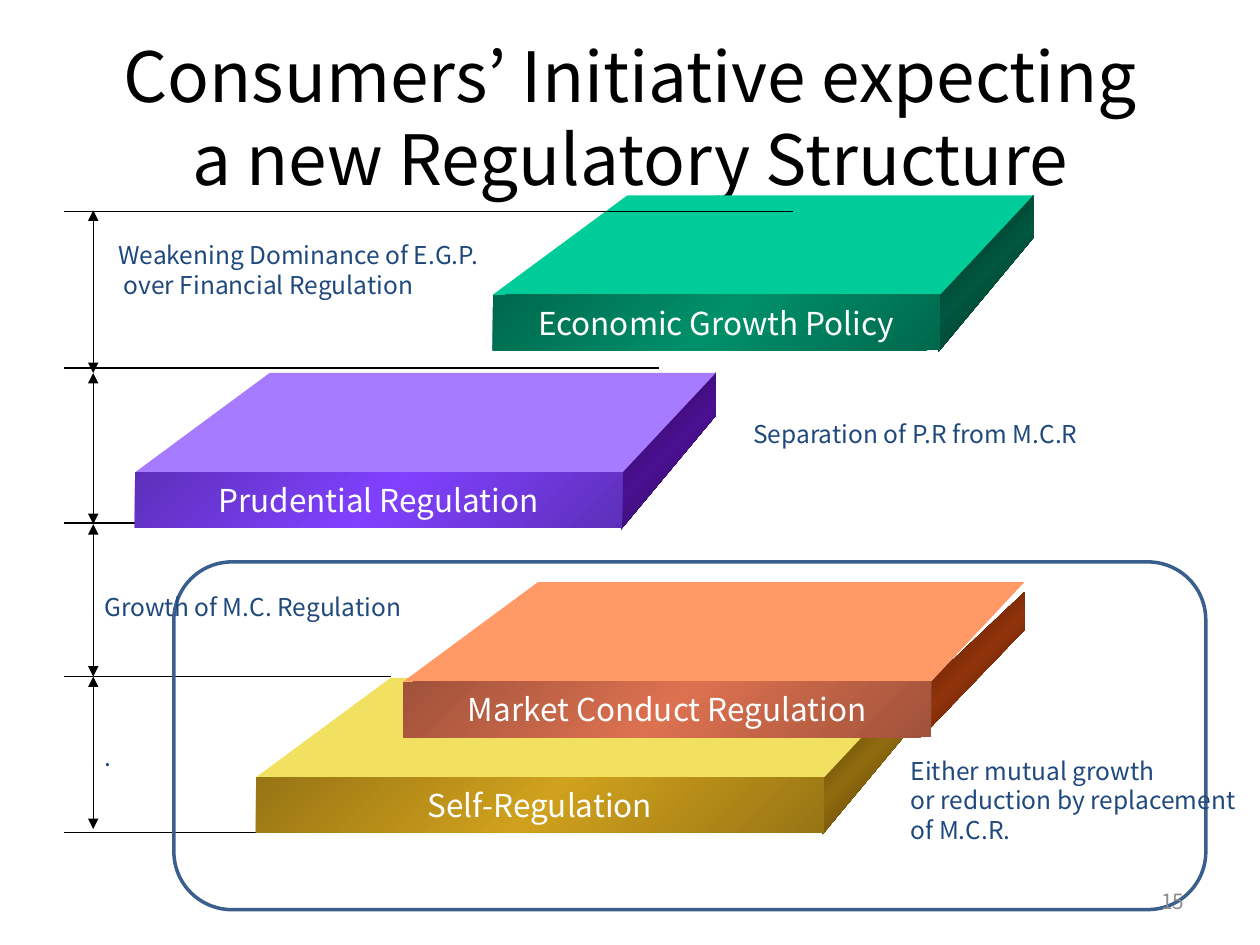
from copy import deepcopy
from dataclasses import dataclass

from lxml import etree
from pptx import Presentation
from pptx import util as u
from pptx.dml.color import RGBColor
from pptx.enum import shapes, text
from pptx.oxml.ns import qn


@dataclass(frozen=True)
class Theme:
    font: str = "Noto Sans CJK KR"
    ink: str = "000000"
    note: str = "1F497D"
    label: str = "FFFFFF"
    muted: str = "8C8C8C"
    frame: str = "3A5F8C"
    title_size: float = 39.6
    label_size: float = 18
    note_size: float = 14
    number_size: float = 12
    leading: float = 1.2
    green: tuple = ("00CC99", "00684D", "00906A", "00281D", "00563F")
    violet: tuple = ("A77BFF", "5D2FB9", "8041FF", "230744", "4B1092")
    yellow: tuple = ("F2E160", "977514", "D0A11C", "433206", "906B0E")
    orange: tuple = ("FF9966", "A0523A", "DC7150", "431805", "90330A")


THEME = Theme()
COLUMNS, ROWS = 100, 75


def write(frame, content, size, color, align=text.PP_ALIGN.LEFT,
          anchor=text.MSO_ANCHOR.TOP, wrap=False):
    frame.word_wrap = wrap
    frame.vertical_anchor = anchor
    frame.text = content
    for para in frame.paragraphs:
        para.alignment = align
        para.line_spacing = u.Pt(size * THEME.leading)
        for span in para.runs:
            span.font.name = THEME.font
            span.font.size = u.Pt(size)
            span.font.color.rgb = RGBColor.from_string(color)


class Board:
    def __init__(self, deck, theme):
        self.theme = theme
        self.column = deck.slide_width / COLUMNS
        self.row = deck.slide_height / ROWS
        self.page = deck.slides.add_slide(deck.slide_layouts[6])

    def place(self, *lengths):
        units = (self.column, self.row) * 2
        return [u.Emu(round(length * unit)) for length, unit in zip(lengths, units)]

    def text(self, area, content, size, color, **style):
        box = self.page.shapes.add_textbox(*self.place(*area))
        write(box.text_frame, content, size, color, **style)

    def shade(self, shape, edge, middle):
        shape.fill.gradient()
        shape.fill.gradient_angle = 315
        stop_list = shape._element.spPr.find(qn("a:gradFill")).find(qn("a:gsLst"))
        stop_list.insert(1, deepcopy(stop_list[0]))
        stops = zip(shape.fill.gradient_stops, (0, 0.5, 1), (edge, middle, edge))
        for stop, position, color in stops:
            stop.position = position
            stop.color.rgb = RGBColor.from_string(color)

    def polygon(self, points):
        corners = [self.place(*point) for point in points]
        builder = self.page.shapes.build_freeform(*corners[0])
        builder.add_line_segments(corners[1:], close=True)
        shape = builder.convert_to_shape()
        shape.shadow.inherit = False
        shape.line.fill.background()
        return shape

    def slab(self, label, left, back, width, colors, gap=0):
        top_color, front_edge, front_middle, side_edge, side_middle = colors
        front, height, depth = back + 7.9, 4.4, 7.4
        right = left + width
        far = right + depth
        side = self.polygon([
            (far, back + 3.4 + gap / 2), (right - 0.1, back + 12.4 - gap),
            (right - 0.1, front), (far, back + gap)])
        self.shade(side, side_edge, side_middle)
        lid = self.polygon([
            (right, front), (left, front), (left + 10.7, back), (far, back)])
        lid.fill.solid()
        lid.fill.fore_color.rgb = RGBColor.from_string(top_color)
        face = self.page.shapes.add_shape(
            shapes.MSO_SHAPE.RECTANGLE, *self.place(left, front, width, height))
        face.shadow.inherit = False
        face.line.fill.background()
        self.shade(face, front_edge, front_middle)
        write(face.text_frame, label, self.theme.label_size, self.theme.label,
              align=text.PP_ALIGN.CENTER, anchor=text.MSO_ANCHOR.MIDDLE)

    def line(self, start, end, arrows=False):
        rule = self.page.shapes.add_connector(
            shapes.MSO_CONNECTOR.STRAIGHT, *self.place(*start, *end))
        rule.line.color.rgb = RGBColor.from_string(self.theme.ink)
        rule.line.width = u.Pt(0.75)
        if arrows:
            outline = rule.line._get_or_add_ln()
            for end_name in ("a:headEnd", "a:tailEnd"):
                etree.SubElement(outline, qn(end_name), type="triangle")
        etree.SubElement(rule._element.spPr, qn("a:effectLst"))

    def frame(self, area):
        box = self.page.shapes.add_shape(
            shapes.MSO_SHAPE.ROUNDED_RECTANGLE, *self.place(*area))
        box.shadow.inherit = False
        box.fill.background()
        box.line.color.rgb = RGBColor.from_string(self.theme.frame)
        box.line.width = u.Pt(2)


def main():
    deck = Presentation()
    deck.slide_width, deck.slide_height = u.Inches(10), u.Inches(7.5)
    board = Board(deck, THEME)

    board.text((5, 3, 90, 12.5),
               "Consumers’ Initiative expecting\va new Regulatory Structure",
               THEME.title_size, THEME.ink, align=text.PP_ALIGN.CENTER,
               anchor=text.MSO_ANCHOR.MIDDLE, wrap=True)

    board.slab("Economic Growth Policy", 39.1, 15.5, 35.5, THEME.green)
    levels = [(62.9, 16.8), (52.3, 29.2), (41.6, 41.5), (31, 53.7), (20.3, 66.1)]
    for reach, level in levels:
        board.line((reach, level), (5.1, level))
    stops = [16.7, 29.6, 41.6, 53.7, 65.8]
    for upper, lower in zip(stops, stops[1:]):
        board.line((7.4, upper), (7.4, lower), arrows=True)
    board.slab("Prudential Regulation", 10.7, 29.6, 38.7, THEME.violet)
    board.slab("Self-Regulation", 20.3, 53.8, 45.1, THEME.yellow)
    board.slab("Market Conduct Regulation", 32, 46.2, 41.9, THEME.orange, gap=0.8)

    board.frame((13.8, 44.6, 81.9, 27.6))
    notes = [
        ((8.4, 18.6, 30.9, 5.7),
         "Weakening Dominance of E.G.P.\n over Financial Regulation"),
        ((58.8, 32.8, 28.4, 3.4), "Separation of P.R from M.C.R"),
        ((7.3, 46.5, 25.7, 3.4), "Growth of M.C. Regulation"),
        ((7.3, 58.4, 2.5, 3.4), "."),
        ((71.3, 59.5, 28.2, 8.1),
         "Either mutual growth\nor reduction by replacement\nof M.C.R."),
    ]
    for area, content in notes:
        board.text(area, content, THEME.note_size, THEME.note)
    board.text((71.7, 69.5, 23.3, 4), "15", THEME.number_size, THEME.muted,
               align=text.PP_ALIGN.RIGHT, anchor=text.MSO_ANCHOR.MIDDLE, wrap=True)

    deck.save("out.pptx")


if __name__ == "__main__":
    main()
